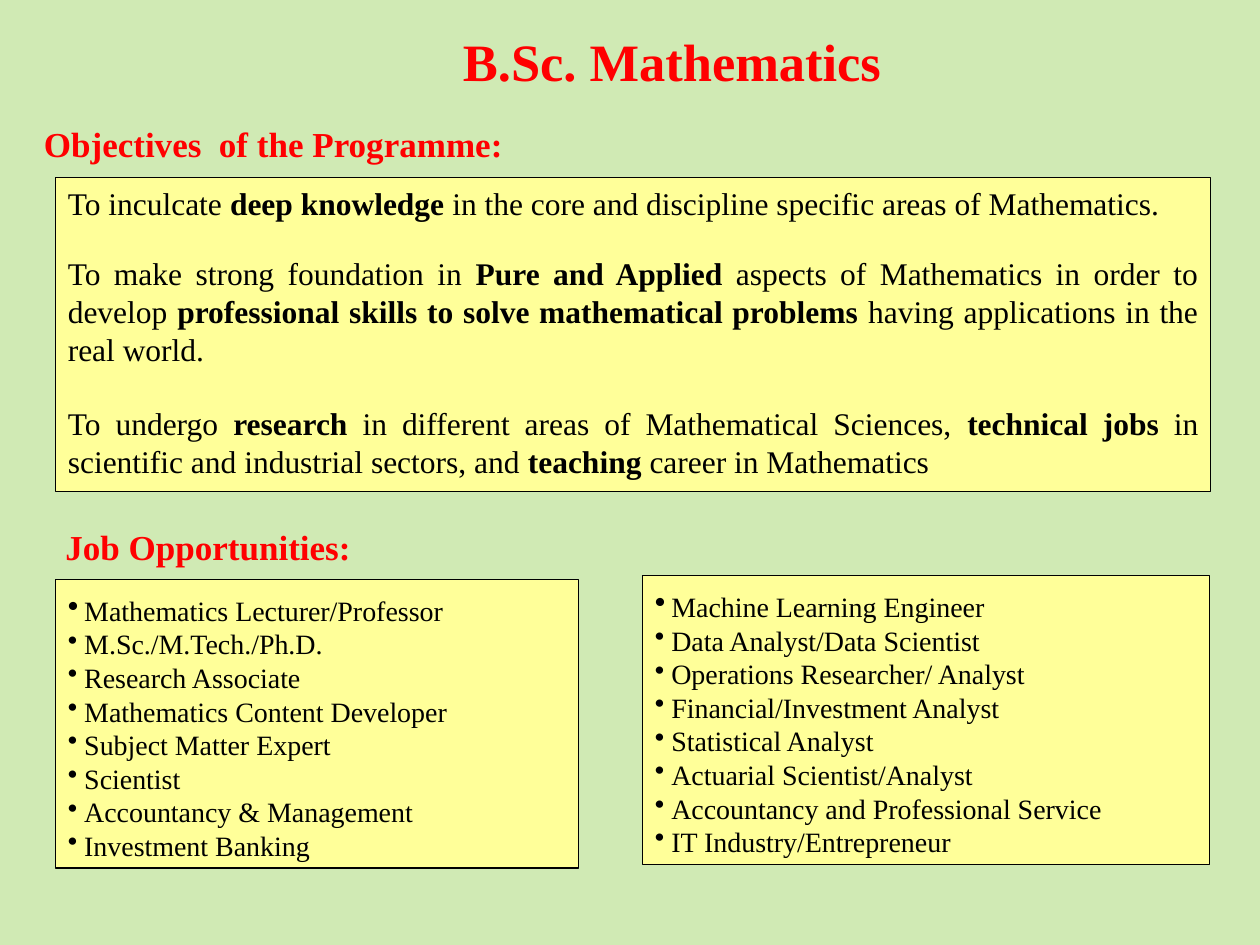
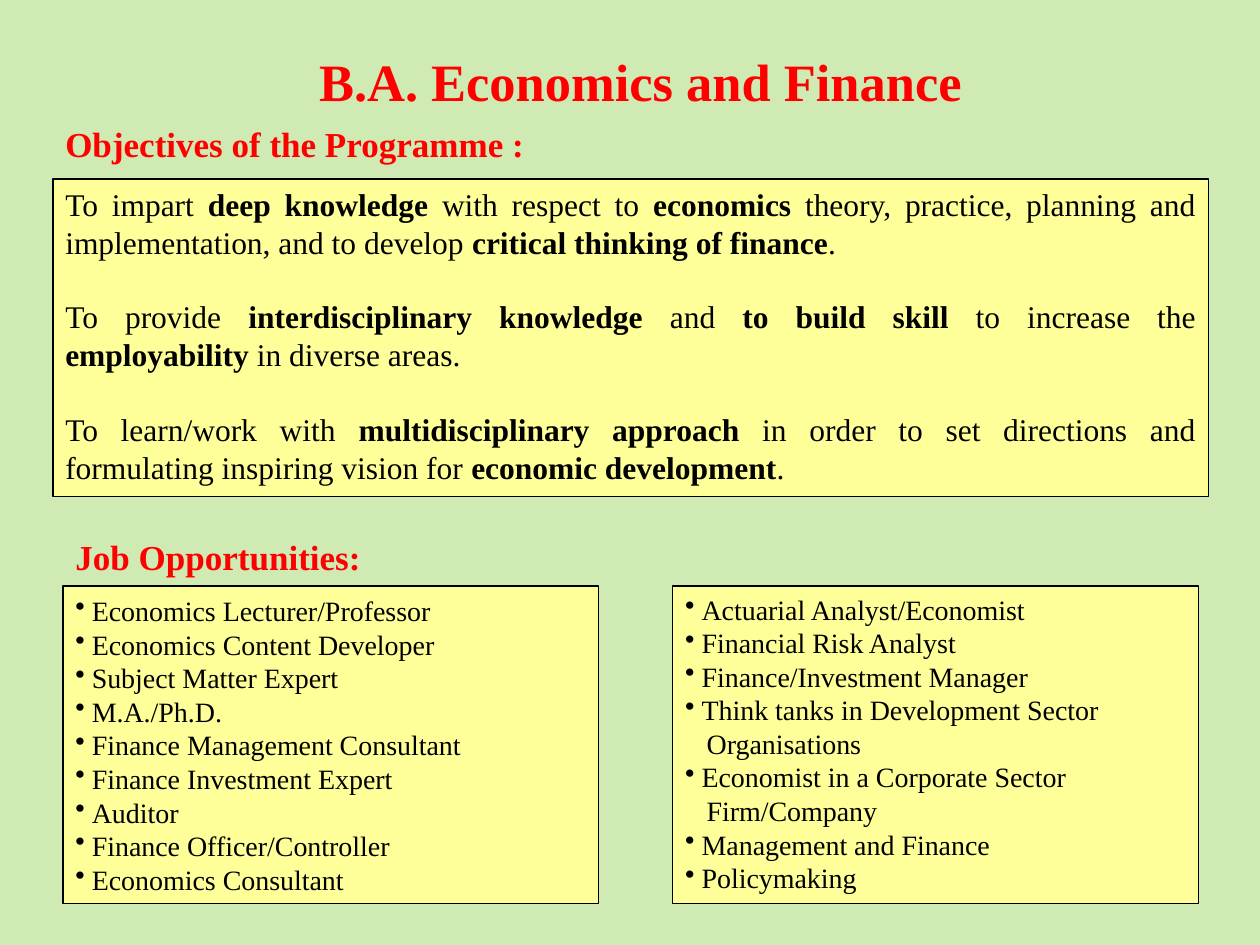
"""Build two programme slides with objectives and job lists."""
from dataclasses import dataclass

from lxml import etree
from pptx import Presentation
from pptx import util as u
from pptx.dml.color import RGBColor
from pptx.enum import shapes, text
from pptx.oxml import ns

FONT = "Times New Roman"
GREEN, YELLOW, RED, BLACK = "D0EAB4", "FFFF99", "FF0000", "000000"
WIDE, HIGH = u.Inches(10), u.Inches(7.5)
COLS, ROWS = 100, 75
HANG, DEEP = u.Inches(0.13), u.Inches(0.17)
CONT = "+"
TOP, MID, LOW = (text.MSO_ANCHOR.TOP, text.MSO_ANCHOR.MIDDLE,
                 text.MSO_ANCHOR.BOTTOM)
LEFT, MIDDLE, BOTH = (text.PP_ALIGN.LEFT, text.PP_ALIGN.CENTER,
                      text.PP_ALIGN.JUSTIFY)


@dataclass
class Area:
    """Left, top, width and height in grid columns and rows."""
    x: float
    y: float
    w: float
    h: float

    def cells(self) -> tuple:
        col, row = WIDE / COLS, HIGH / ROWS
        return tuple(round(n) for n in
                     (self.x * col, self.y * row, self.w * col, self.h * row))


@dataclass
class Label:
    """A red heading."""
    area: Area
    text: str


@dataclass
class Goals:
    """Objectives, with **bold** marks and the gaps between them."""
    area: Area
    lines: list
    gaps: tuple


@dataclass
class Jobs:
    """A bulleted list; a line that starts with CONT has no bullet."""
    area: Area
    lines: list
    anchor: int
    align: int
    lead: int = 100


@dataclass
class Page:
    """All parts of one slide."""
    title: Label
    heads: list
    goals: Goals
    jobs: list


def hue(code: str) -> RGBColor:
    """Turn a hex string into a colour."""
    return RGBColor.from_string(code)


def style(part, size: float, code: str, bold: bool = False) -> None:
    """Format every run of a paragraph."""
    for run in part.runs:
        font = run.font
        font.name, font.size, font.bold = FONT, u.Pt(size), bold
        font.color.rgb = hue(code)


def draw_label(slide, label: Label, size: float, title: bool = False) -> None:
    """Draw a title or a section heading."""
    box = slide.shapes.add_textbox(*label.area.cells())
    frame = box.text_frame
    frame.text = label.text
    frame.word_wrap = title
    frame.auto_size = (text.MSO_AUTO_SIZE.NONE if title
                       else text.MSO_AUTO_SIZE.SHAPE_TO_FIT_TEXT)
    frame.vertical_anchor = MID if title else TOP
    part = frame.paragraphs[0]
    part.alignment = MIDDLE if title else LEFT
    style(part, size, RED, True)


def draw_card(slide, area: Area, anchor: int):
    """Draw a yellow card and return its text frame."""
    card = slide.shapes.add_shape(shapes.MSO_SHAPE.RECTANGLE, *area.cells())
    card.shadow.inherit = False
    card.fill.solid()
    card.fill.fore_color.rgb = hue(YELLOW)
    card.line.color.rgb = hue(BLACK)
    card.line.width = u.Pt(0.75)
    frame = card.text_frame
    frame.word_wrap = True
    frame.vertical_anchor = anchor
    return frame


def draw_goals(slide, goals: Goals) -> None:
    """Draw the objectives card."""
    frame = draw_card(slide, goals.area, TOP)
    for i, line in enumerate(goals.lines):
        part = frame.add_paragraph() if i else frame.paragraphs[0]
        part.alignment = BOTH
        if i:
            part.space_before = u.Pt(goals.gaps[i - 1])
        for piece in line.split("**"):
            part.add_run().text = piece
        style(part, 18, BLACK)
        for run in part.runs[1::2]:
            run.font.bold = True


def add_mark(part, share: int) -> None:
    """Give a paragraph a hanging bullet of a given size in percent."""
    props = part._p.get_or_add_pPr()
    props.set("marL", str(HANG))
    props.set("indent", str(-HANG))
    size = etree.SubElement(props, ns.qn("a:buSzPct"))
    size.set("val", str(share * 1000))
    mark = etree.SubElement(props, ns.qn("a:buChar"))
    mark.set("char", "•")


def draw_jobs(slide, jobs: Jobs) -> None:
    """Draw a job list card."""
    frame = draw_card(slide, jobs.area, jobs.anchor)
    frame.text = "\n".join(line.lstrip(CONT) for line in jobs.lines)
    for i, (part, line) in enumerate(zip(frame.paragraphs, jobs.lines)):
        part.alignment = jobs.align
        style(part, 16, BLACK)
        if line.startswith(CONT):
            part._p.get_or_add_pPr().set("marL", str(DEEP))
        else:
            add_mark(part, 100 if i else jobs.lead)


def draw_page(deck, page: Page) -> None:
    """Add one slide."""
    slide = deck.slides.add_slide(deck.slide_layouts[6])
    back = slide.background.fill
    back.solid()
    back.fore_color.rgb = hue(GREEN)
    draw_label(slide, page.title, 30, True)
    draw_goals(slide, page.goals)
    for jobs in page.jobs:
        draw_jobs(slide, jobs)
    for head in page.heads:
        draw_label(slide, head, 20)


MATHS = Page(
    Label(Area(34.2, 0.2, 38.3, 9.2), "B.Sc. Mathematics"),
    [Label(Area(2.5, 9.2, 40.1, 4.4), "Objectives  of the Programme:"),
     Label(Area(4.2, 41.2, 24.8, 4.4), "Job Opportunities:")],
    Goals(Area(4.4, 14.1, 91.7, 24.9), [
        "To inculcate **deep knowledge** in the core and discipline specific "
        "areas of Mathematics.",
        "To make strong foundation in **Pure and Applied** aspects of "
        "Mathematics in order to develop **professional skills to solve "
        "mathematical problems** having applications in the real world.",
        "To undergo **research** in different areas of Mathematical Sciences, "
        "**technical jobs** in scientific and industrial sectors, and "
        "**teaching** career in Mathematics"], (18.5, 21)),
    [Jobs(Area(4.4, 46, 41.5, 22.9), [
        "Mathematics Lecturer/Professor", "M.Sc./M.Tech./Ph.D.",
        "Research Associate", "Mathematics Content Developer",
        "Subject Matter Expert", "Scientist", "Accountancy & Management",
        "Investment Banking"], LOW, LEFT, 112),
     Jobs(Area(51, 45.7, 45, 22.9), [
         "Machine Learning Engineer", "Data Analyst/Data Scientist",
         "Operations Researcher/ Analyst", "Financial/Investment Analyst",
         "Statistical Analyst", "Actuarial Scientist/Analyst",
         "Accountancy and Professional Service",
         "IT Industry/Entrepreneur"], LOW, LEFT, 112)])

FINANCE = Page(
    Label(Area(24.2, 1.8, 53.3, 9.2), "B.A. Economics and Finance"),
    [Label(Area(4.2, 9.2, 38.7, 4.4), "Objectives of the Programme :"),
     Label(Area(5, 42, 25.5, 4.4), "Job Opportunities:")],
    Goals(Area(4.2, 14.2, 91.7, 25.2), [
        "To impart **deep knowledge** with respect to **economics** theory, "
        "practice, planning and implementation, and to develop **critical "
        "thinking of finance**.",
        "To provide **interdisciplinary knowledge** and **to build skill** to "
        "increase the **employability** in diverse areas.",
        "To learn/work with **multidisciplinary approach** in order to set "
        "directions and formulating inspiring vision for **economic "
        "development**."], (21, 21)),
    [Jobs(Area(5, 46.5, 42.5, 25.2), [
        "Economics Lecturer/Professor", "Economics Content Developer",
        "Subject Matter Expert", "M.A./Ph.D.",
        "Finance Management Consultant", "Finance Investment Expert",
        "Auditor", "Finance Officer/Controller", "Economics Consultant"],
        MID, BOTH),
     Jobs(Area(53.4, 46.5, 41.7, 25.2), [
         "Actuarial Analyst/Economist", "Financial Risk Analyst",
         "Finance/Investment Manager", "Think tanks in Development Sector",
         CONT + "Organisations", "Economist in a Corporate Sector",
         CONT + "Firm/Company", "Management and Finance", "Policymaking"],
         TOP, BOTH)])


def main() -> None:
    """Build and save the deck."""
    deck = Presentation()
    deck.slide_width, deck.slide_height = WIDE, HIGH
    for page in (MATHS, FINANCE):
        draw_page(deck, page)
    deck.save("out.pptx")


if __name__ == "__main__":
    main()
